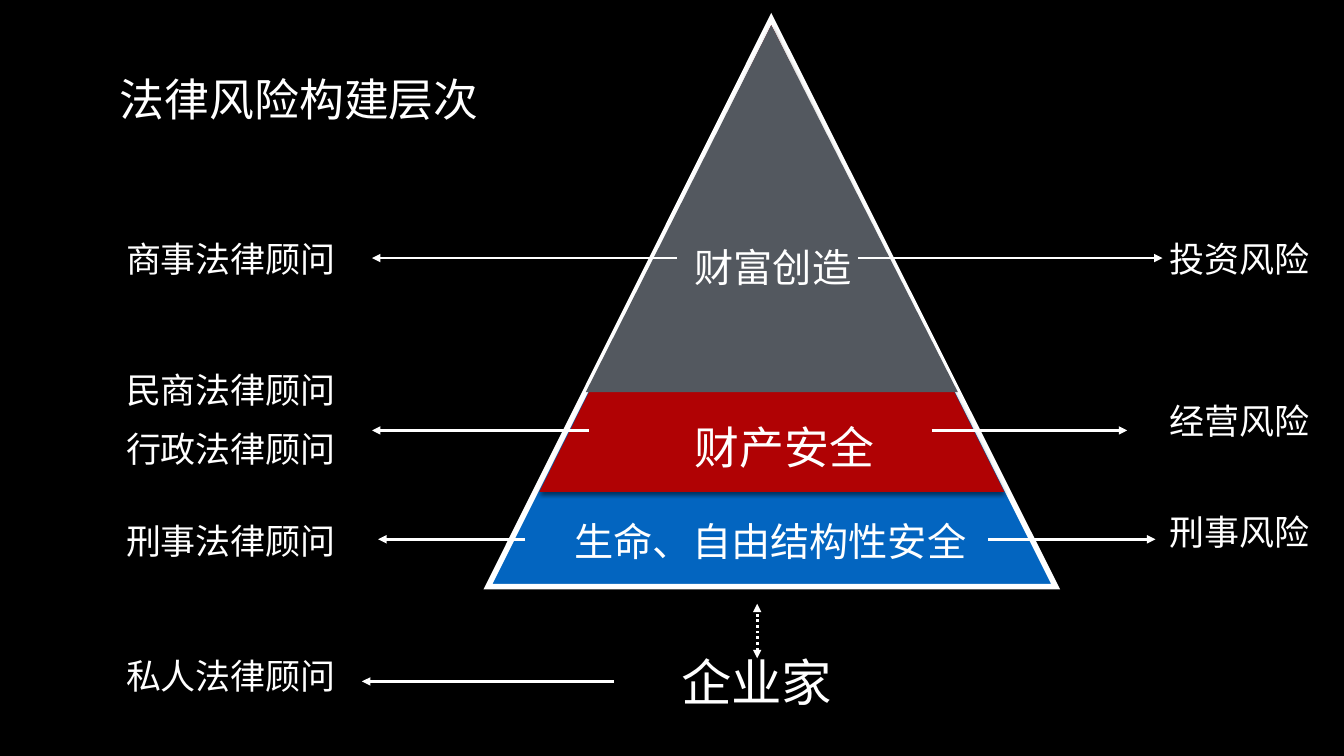
from pptx import Presentation
from pptx.dml.color import RGBColor
from pptx.enum.dml import MSO_LINE
from pptx.enum.shapes import MSO_CONNECTOR
from pptx.enum.text import MSO_ANCHOR, MSO_AUTO_SIZE, PP_ALIGN
from pptx.oxml import parse_xml
from pptx.oxml.ns import nsdecls
from pptx.util import Inches, Pt

FONT = "Noto Sans CJK SC"
WHITE = "FFFFFF"
APEX_X = 7.65
ADVISER_X, RISK_X = 1.22, 11.57
LABEL_HEIGHT = 0.41

TIERS = [
    (0.19, 5.82, 4.84, 10.47, "0365C0"),
    (0.25, 4.88, 5.35, 9.96, "B00204"),
    (0.25, 3.89, 5.81, 9.5, "53585F"),
]
TIER_LABELS = [
    ("财富创造", 6.86, 2.43, 1.63, 0.44, 28),
    ("财产安全", 6.86, 4.18, 1.85, 0.5, 32),
    ("生命、自由结构性安全", 5.67, 5.15, 3.96, 0.44, 28),
]
ADVISERS = [
    ("商事法律顾问", 2.36),
    ("民商法律顾问", 3.66),
    ("行政法律顾问", 4.24),
    ("刑事法律顾问", 5.16),
    ("私人法律顾问", 6.5),
]
RISKS = [("投资风险", 2.36), ("经营风险", 3.97), ("刑事风险", 5.07)]
ARROWS = [
    (6.71, 3.69, 2.56),
    (8.51, 11.53, 2.56),
    (5.84, 3.69, 4.27),
    (9.24, 11.18, 4.27),
    (5.21, 3.75, 5.35),
    (9.8, 11.46, 5.35),
    (6.09, 3.59, 6.76),
]


def color(hex_value):
    """Turn a hex string into a colour."""
    return RGBColor.from_string(hex_value)


def element(tag, attributes="", content=""):
    """Make one drawing element."""
    return parse_xml(f"<a:{tag} {nsdecls('a')} {attributes}>{content}</a:{tag}>")


def add_tier(slide, top, base, left, right, fill):
    """Draw one triangle of the pyramid."""
    outline = slide.shapes.build_freeform(Inches(APEX_X), Inches(top))
    outline.add_line_segments([(Inches(right), Inches(base)), (Inches(left), Inches(base))])
    tier = outline.convert_to_shape()
    tier.shadow.inherit = False
    tier.fill.solid()
    tier.fill.fore_color.rgb = color(fill)
    tier.line.fill.background()
    return tier


def outline_tier(tier):
    """Give a triangle a white border with sharp corners."""
    tier.line.color.rgb = color(WHITE)
    tier.line.width = Pt(4)
    tier.element.spPr.get_or_add_ln().append(element("miter", 'lim="800000"'))


def shade_tier(tier):
    """Give a triangle a soft shadow below."""
    shadow = element(
        "outerShdw",
        'blurRad="38100" dist="25400" dir="5400000" rotWithShape="0"',
        '<a:srgbClr val="000000"><a:alpha val="50000"/></a:srgbClr>',
    )
    tier.element.spPr.find("{*}effectLst").append(shadow)


def write(box, text, size, inset=0.03, wrap=False, align=PP_ALIGN.LEFT):
    """Fill a box with one white line of text."""
    frame = box.text_frame
    frame.word_wrap = wrap
    frame.auto_size = MSO_AUTO_SIZE.SHAPE_TO_FIT_TEXT
    frame.vertical_anchor = MSO_ANCHOR.MIDDLE
    frame.margin_left = frame.margin_right = Inches(inset)
    frame.margin_top = frame.margin_bottom = Inches(inset)
    line = frame.paragraphs[0]
    line.alignment = align
    run = line.add_run()
    run.text = text
    run.font.size = Pt(size)
    run.font.name = FONT
    run.font.color.rgb = color(WHITE)
    run.font._element.find("{*}latin").addnext(element("ea", f'typeface="{FONT}"'))


def add_label(slide, text, left, top, width, height, size, **options):
    """Add a text box holding one label."""
    box = slide.shapes.add_textbox(Inches(left), Inches(top), Inches(width), Inches(height))
    write(box, text, size, **options)


def add_title(slide, text, left, top, width, height):
    """Move and fill the title placeholder."""
    title = slide.shapes.title
    title.left, title.top = Inches(left), Inches(top)
    title.width, title.height = Inches(width), Inches(height)
    write(title, text, 32)


def add_arrow(slide, x1, y1, x2, y2, both_ways=False):
    """Draw a white arrow, dotted when it points both ways."""
    arrow = slide.shapes.add_connector(
        MSO_CONNECTOR.STRAIGHT, Inches(x1), Inches(y1), Inches(x2), Inches(y2)
    )
    arrow.line.color.rgb = color(WHITE)
    arrow.line.width = Pt(2)
    stroke = arrow.element.spPr.get_or_add_ln()
    if both_ways:
        arrow.line.dash_style = MSO_LINE.ROUND_DOT
        stroke.append(element("headEnd", 'type="triangle"'))
    stroke.append(element("tailEnd", 'type="triangle"'))
    arrow.element.spPr.append(element("effectLst"))


def main():
    """Build and save the slide."""
    deck = Presentation()
    deck.slide_width, deck.slide_height = Inches(13.33), Inches(7.5)
    slide = deck.slides.add_slide(deck.slide_layouts[5])
    slide.background.fill.solid()
    slide.background.fill.fore_color.rgb = color("000000")

    add_title(slide, "法律风险构建层次", 1.16, 0.73, 3.63, 0.5)
    life, property_safety, _ = [add_tier(slide, *tier) for tier in TIERS]
    outline_tier(life)
    shade_tier(property_safety)

    for label in TIER_LABELS:
        add_label(slide, *label)
    for text, top in ADVISERS:
        add_label(slide, text, ADVISER_X, top, 2.15, LABEL_HEIGHT, 25)
    for text, top in RISKS:
        add_label(slide, text, RISK_X, top, 1.46, LABEL_HEIGHT, 25)
    add_label(slide, "企业家", 6.3, 6.45, 2.41, 0.61, 36,
              inset=0.06, wrap=True, align=PP_ALIGN.CENTER)

    for start, end, y in ARROWS:
        add_arrow(slide, start, y, end, y)
    add_arrow(slide, 7.51, 6.53, 7.51, 5.99, both_ways=True)

    deck.save("out.pptx")


if __name__ == "__main__":
    main()
